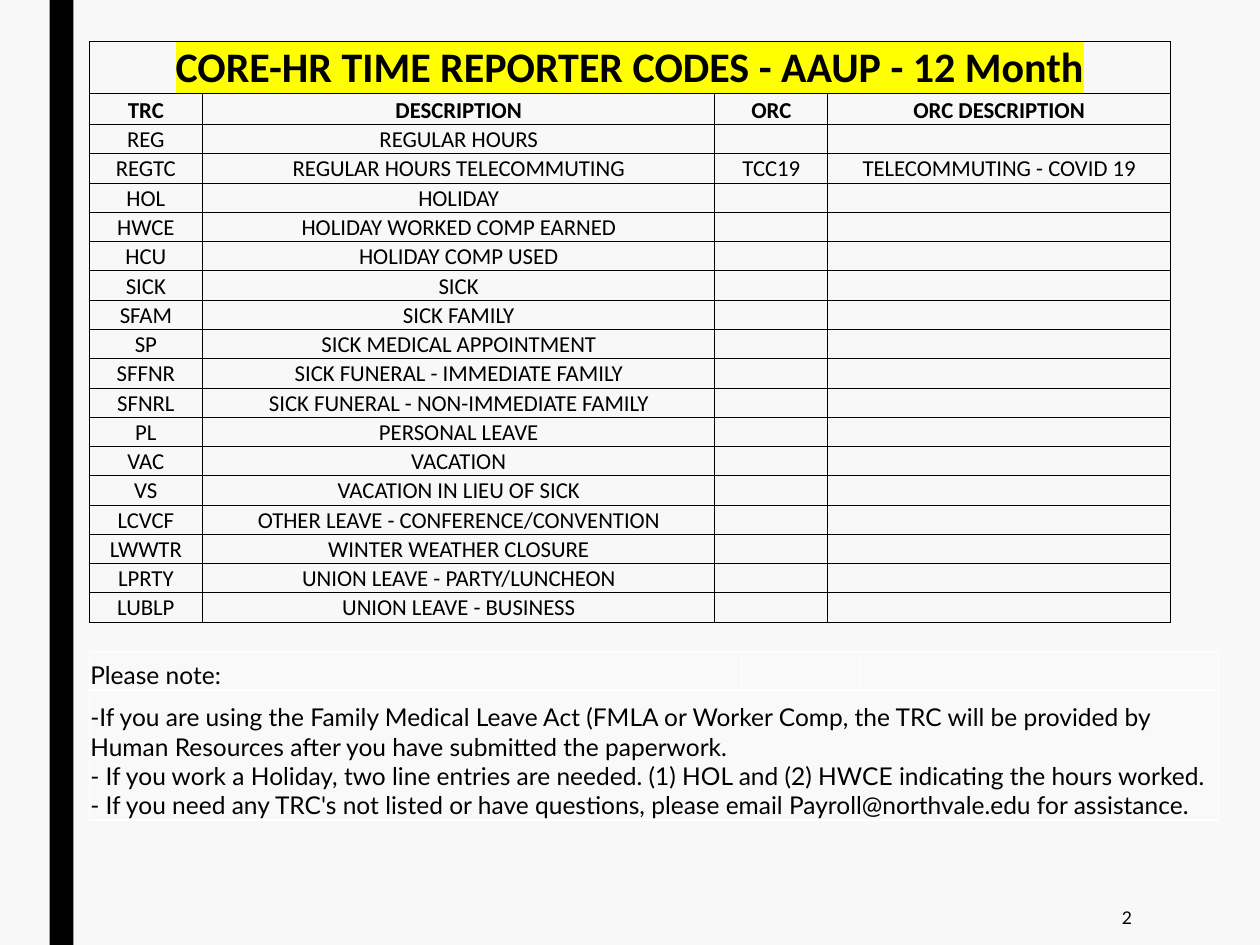
import pptx
import pptx.util
import pptx.dml.color
import pptx.enum.shapes
import pptx.enum.text
import pptx.oxml.ns
import lxml.etree
from pptx.util import Cm

COLOURS = {"background": "F8F8F8", "ink": "000000", "highlight": "FFFF00",
           "note_fill": "F9F9F9", "note_border": "FFFFFF"}
PLAIN_TABLE_STYLE = "{2D5ABB26-0587-4C30-8999-92F81FD0307C}"
CENTER = pptx.enum.text.PP_ALIGN.CENTER
LEFT = pptx.enum.text.PP_ALIGN.LEFT
RIGHT = pptx.enum.text.PP_ALIGN.RIGHT

TITLE = "CORE-HR TIME REPORTER CODES - AAUP - 12 Month"
HEADINGS = ["TRC", "DESCRIPTION", "ORC", "ORC DESCRIPTION"]
CODES = [
    ["REG", "REGULAR HOURS"],
    ["REGTC", "REGULAR HOURS TELECOMMUTING", "TCC19", "TELECOMMUTING - COVID 19"],
    ["HOL", "HOLIDAY"],
    ["HWCE", "HOLIDAY WORKED COMP EARNED"],
    ["HCU", "HOLIDAY COMP USED"],
    ["SICK", "SICK"],
    ["SFAM", "SICK FAMILY"],
    ["SP", "SICK MEDICAL APPOINTMENT"],
    ["SFFNR", "SICK FUNERAL - IMMEDIATE FAMILY"],
    ["SFNRL", "SICK FUNERAL - NON-IMMEDIATE FAMILY"],
    ["PL", "PERSONAL LEAVE"],
    ["VAC", "VACATION"],
    ["VS", "VACATION IN LIEU OF SICK"],
    ["LCVCF", "OTHER LEAVE - CONFERENCE/CONVENTION"],
    ["LWWTR", "WINTER WEATHER CLOSURE"],
    ["LPRTY", "UNION LEAVE - PARTY/LUNCHEON"],
    ["LUBLP", "UNION LEAVE - BUSINESS"],
]
NOTES = "\n".join([
    "-If you are using the Family Medical Leave Act (FMLA or Worker Comp, the TRC will be "
    "provided by Human Resources after you have submitted the paperwork.",
    "- If you work a Holiday, two line entries are needed. (1) HOL and (2) HWCE indicating "
    "the hours worked.",
    "- If you need any TRC's not listed or have questions, please email "
    "Payroll@northvale.edu for assistance.",
])


def colour(name):
    return pptx.dml.color.RGBColor.from_string(COLOURS[name])


def add_element(parent, tag, **attributes):
    return lxml.etree.SubElement(parent, pptx.oxml.ns.qn(tag), attributes)


def write_text(text_frame, text, size, font, alignment, bold=False):
    text_frame.text = text
    for paragraph in text_frame.paragraphs:
        paragraph.alignment = alignment
        for run in paragraph.runs:
            run.font.size = pptx.util.Pt(size)
            run.font.name = font
            run.font.bold = bold
            run.font.color.rgb = colour("ink")
        if not paragraph.runs:  # keeps empty rows from growing
            add_element(paragraph._p, "a:endParaRPr", sz=str(size * 100))


def highlight(run):
    element = lxml.etree.Element(pptx.oxml.ns.qn("a:highlight"))
    add_element(element, "a:srgbClr", val=COLOURS["highlight"])
    run.font._element.find(pptx.oxml.ns.qn("a:solidFill")).addnext(element)


def set_borders(cell, colour_name, width, sides="LRTB"):
    properties = cell._tc.get_or_add_tcPr()
    for side in sides:
        line = add_element(properties, f"a:ln{side}", w=str(pptx.util.Pt(width)))
        fill = add_element(line, "a:solidFill")
        add_element(fill, "a:srgbClr", val=COLOURS[colour_name])


def add_plain_table(slide, left, top, widths, heights):
    frame = slide.shapes.add_table(len(heights), len(widths), Cm(left), Cm(top),
                                   Cm(sum(widths)), Cm(sum(heights)))
    table = frame.table
    table.first_row = table.horz_banding = False
    table._tbl.tblPr.find(pptx.oxml.ns.qn("a:tableStyleId")).text = PLAIN_TABLE_STYLE
    for column, width in zip(table.columns, widths):
        column.width = Cm(width)
    for row, height in zip(table.rows, heights):
        row.height = Cm(height)
    for cell in table.iter_cells():
        cell.margin_left = cell.margin_right = cell.margin_top = Cm(0.02)
        cell.margin_bottom = 0
        cell.vertical_anchor = pptx.enum.text.MSO_ANCHOR.BOTTOM
    return table


def add_code_table(slide):
    rows = [[TITLE], HEADINGS, *CODES, [], []]
    heights = [1.05, 0.62] + [0.59] * (len(CODES) + 1) + [0.36]
    table = add_plain_table(slide, 1.8, 0.84, [2.28, 10.33, 2.28, 6.9], heights)
    last_code_row = len(CODES) + 1
    for row_index, texts in enumerate(rows):
        for column_index in range(len(HEADINGS)):
            cell = table.cell(row_index, column_index)
            text = texts[column_index] if column_index < len(texts) else ""
            size = 24 if row_index == 0 else 13 if row_index <= last_code_row else 6
            write_text(cell.text_frame, text, size, "Calibri", CENTER, bold=row_index < 2)
            if row_index <= last_code_row:
                set_borders(cell, "ink", 0.5)
            elif row_index == last_code_row + 1:
                set_borders(cell, "ink", 0.5, "T")
            cell.fill.background()
    highlight(table.cell(0, 0).text_frame.paragraphs[0].runs[0])
    table.cell(0, 0).merge(table.cell(0, 3))
    table.cell(len(rows) - 1, 0).merge(table.cell(len(rows) - 1, 1))


def add_note_table(slide):
    table = add_plain_table(slide, 1.8, 13.13, [13.15, 2.38, 7.23], [0.76, 2.62])
    for cell in table.iter_cells():
        set_borders(cell, "note_border", 1)
        cell.fill.solid()
        cell.fill.fore_color.rgb = colour("note_fill")
    table.cell(1, 0).merge(table.cell(1, 2))
    for row_index, text in enumerate(["Please note:", NOTES]):
        write_text(table.cell(row_index, 0).text_frame, text, 14, "Lato", LEFT)
    table.cell(0, 0).text_frame.paragraphs[0].runs[0].font.underline = True


def add_side_bar(slide):
    bar = slide.shapes.add_shape(pptx.enum.shapes.MSO_SHAPE.RECTANGLE,
                                 Cm(1), 0, Cm(0.48), Cm(19.05))
    bar.shadow.inherit = False
    bar.fill.solid()
    bar.fill.fore_color.rgb = colour("ink")
    bar.line.fill.background()


def add_page_number(slide):
    box = slide.shapes.add_textbox(Cm(19.74), Cm(17.93), Cm(3.33), Cm(1.12))
    box.text_frame.word_wrap = True
    box.text_frame.vertical_anchor = pptx.enum.text.MSO_ANCHOR.MIDDLE
    write_text(box.text_frame, "2", 10, "Lato", RIGHT)


def main():
    presentation = pptx.Presentation()
    presentation.slide_width, presentation.slide_height = Cm(25.4), Cm(19.05)
    slide = presentation.slides.add_slide(presentation.slide_layouts[6])
    slide.background.fill.solid()
    slide.background.fill.fore_color.rgb = colour("background")

    # Frame of the page
    add_side_bar(slide)
    add_page_number(slide)

    # Codes and the notes below them
    add_code_table(slide)
    add_note_table(slide)

    presentation.save("out.pptx")


if __name__ == "__main__":
    main()
